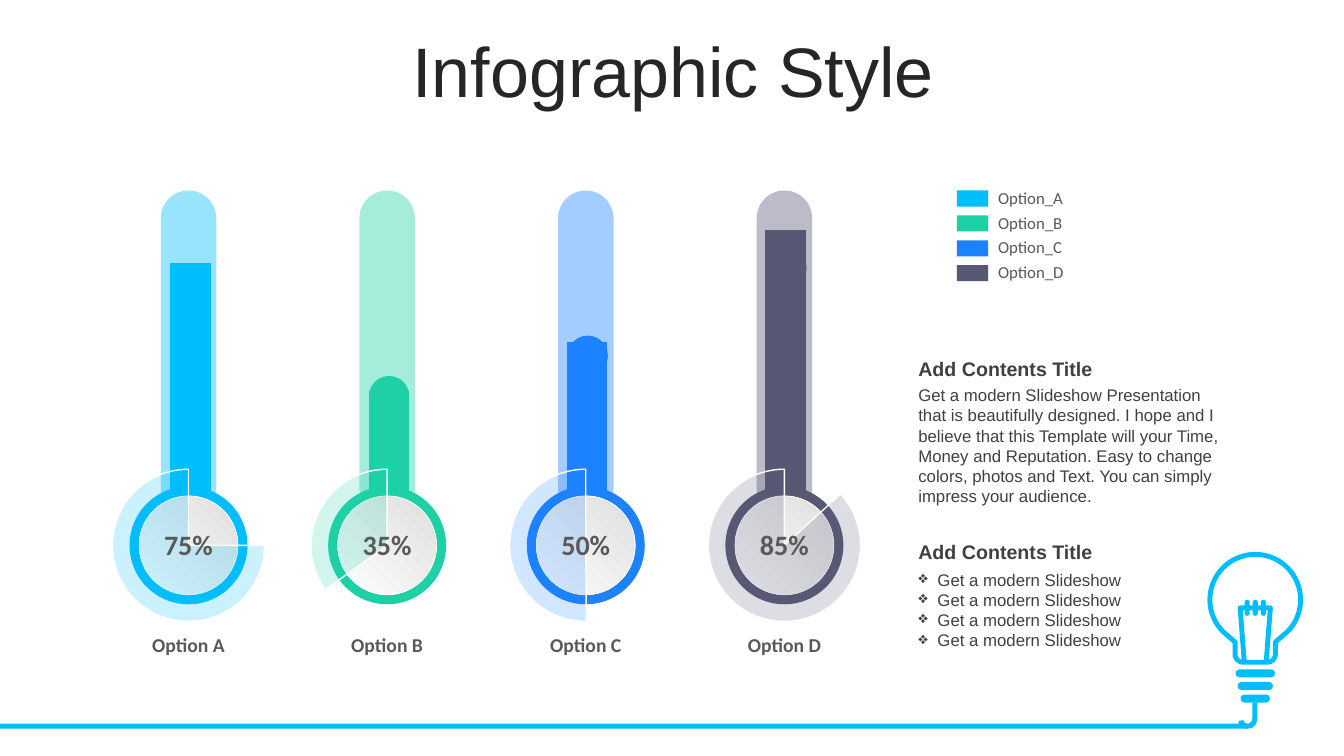
import math

import pptx
import pptx.chart.data
import pptx.dml.color
import pptx.enum.chart
import pptx.enum.shapes
import pptx.enum.text
import pptx.oxml
import pptx.oxml.ns
import pptx.util
from lxml import etree

KIND = pptx.enum.shapes.MSO_SHAPE
CENTER = pptx.enum.text.PP_ALIGN.CENTER
SKY, GREY, INK = "00BDFB", "595959", "404040"

# Letter, colour, percentage, bar height, start angle of the pie, top of the cap
OPTIONS = [
    ("A", SKY, 75, 88, 0, 2.71),
    ("B", "1ED0A6", 35, 41, 144.3, 3.73),
    ("C", "1C82FF", 50, 59, 89.6, 3.33),
    ("D", "565874", 85, 100, 317.6, 2.46),
]

# The slide is a grid of one-inch squares
COLUMNS, ROWS = 13.33, 7.5
FIRST_GAUGE, GAUGE_STEP = 1.87, 1.97
BULB_MIDDLE = 12.45


def grid(*squares):
    return [pptx.util.Inches(count) for count in squares]


def color(code):
    return pptx.dml.color.RGBColor.from_string(code)


def paint(shape, fill=None, line=None, weight=1, opacity=100):
    shape.shadow.inherit = False
    if fill:
        shape.fill.solid()
        shape.fill.fore_color.rgb = color(fill)
        if opacity < 100:
            tone = next(shape._element.iter(pptx.oxml.ns.qn("a:srgbClr")))
            etree.SubElement(tone, pptx.oxml.ns.qn("a:alpha"), val=str(opacity * 1000))
    else:
        shape.fill.background()
    if line:
        shape.line.color.rgb = color(line)
        shape.line.width = pptx.util.Pt(weight)
    else:
        shape.line.fill.background()


def add_preset(slide, kind, box, fill, adjust=(), **look):
    shape = slide.shapes.add_shape(kind, *grid(*box))
    for place, value in enumerate(adjust):
        shape.adjustments[place] = value
    paint(shape, fill, **look)
    return shape


def add_disc(slide, middle, center, size, fill, **look):
    box = (middle - size / 2, center - size / 2, size, size)
    return add_preset(slide, KIND.OVAL, box, fill, **look)


def add_pill(slide, middle, top, width, height, fill, **look):
    box = (middle - width / 2, top, width, height)
    return add_preset(slide, KIND.ROUNDED_RECTANGLE, box, fill, [0.5], **look)


def add_outline(slide, points, closed, **look):
    corners = [grid(*point) for point in points]
    builder = slide.shapes.build_freeform(*corners[0])
    builder.add_line_segments(corners[1:], close=closed)
    paint(builder.convert_to_shape(), **look)


def add_text(slide, box, text, size, tone, font="Arial", bold=False, align=None):
    frame = slide.shapes.add_textbox(*grid(*box)).text_frame
    frame.word_wrap = True
    frame.text = text
    for paragraph in frame.paragraphs:
        paragraph.alignment = align
        for run in paragraph.runs:
            run.font.size = pptx.util.Pt(size)
            run.font.name = font
            run.font.bold = bold
            run.font.color.rgb = color(tone)
    return frame


def add_bullets(frame):
    indent = pptx.util.Inches(0.19)
    for paragraph in frame.paragraphs:
        props = paragraph._p.get_or_add_pPr()
        props.set("marL", str(indent))
        props.set("indent", str(-indent))
        etree.SubElement(props, pptx.oxml.ns.qn("a:buChar"), char="❖")


def arc(middle, center, radius, start, end, steps=48):
    angles = [math.radians(start + (end - start) * step / steps) for step in range(steps + 1)]
    return [(middle + radius * math.cos(a), center + radius * math.sin(a)) for a in angles]


def add_light_bulb(slide):
    # Glass and neck with rounded lower corners
    glass = arc(BULB_MIDDLE, 5.95, 0.45, 135, 405)
    neck = [(BULB_MIDDLE + 0.2, 6.37)]
    neck += arc(BULB_MIDDLE + 0.12, 6.49, 0.08, 0, 90, 8)
    neck += arc(BULB_MIDDLE - 0.12, 6.49, 0.08, 90, 180, 8)
    neck += [(BULB_MIDDLE - 0.2, 6.37)]
    add_outline(slide, glass + neck, True, fill="FFFFFF", line=SKY, weight=3.5)
    # Screw base
    for turn, width in enumerate((0.39, 0.35, 0.29)):
        add_pill(slide, BULB_MIDDLE, 6.64 + 0.125 * turn, width, 0.08, SKY)
    # Filament
    filament = [(x + BULB_MIDDLE, y) for x, y in
                ((-0.11, 6.55), (-0.15, 6.03), (0.15, 6.03), (0.11, 6.55))]
    add_outline(slide, filament, False, line=SKY, weight=3.5)
    for coil in (-1, 0, 1):
        add_pill(slide, BULB_MIDDLE + 0.08 * coil, 5.95, 0.05, 0.16, SKY)
    # Cable
    add_preset(slide, KIND.RECTANGLE, (0, 7.18, 12.37, 0.05), SKY)
    add_preset(slide, KIND.RECTANGLE, (12.42, 6.97, 0.05, 0.17), SKY)
    add_preset(slide, KIND.BLOCK_ARC, (12.28, 7.04, 0.19, 0.19), SKY, [-4.34, 101.53, 0.27])


def add_level_chart(slide):
    levels = pptx.chart.data.CategoryChartData()
    levels.categories = ["1", "2", "3", "4"]
    levels.add_series("Series 1", [option[3] for option in OPTIONS])
    chart = slide.shapes.add_chart(
        pptx.enum.chart.XL_CHART_TYPE.COLUMN_STACKED, *grid(0.74, 2.08, 8.2, 2.96), levels).chart
    chart.has_legend = chart.has_title = False
    chart.font.size = pptx.util.Pt(18)
    chart.font.name = "Arial"
    chart.font.color.rgb = color("000000")
    chart.category_axis.visible = chart.value_axis.visible = False
    chart.value_axis.has_major_gridlines = False
    chart.value_axis.minimum_scale, chart.value_axis.maximum_scale = 0, 100
    plot = chart.plots[0]
    plot.gap_width, plot.overlap, plot.vary_by_categories = 392, 100, False
    for place, option in enumerate(OPTIONS):
        bar = plot.series[0].points[place].format.fill
        bar.solid()
        bar.fore_color.rgb = color(option[1])
    # Fixed plot area, so that the bars stand inside the tubes
    area = chart._chartSpace.chart.plotArea
    for old in area.findall(pptx.oxml.ns.qn("c:layout")):
        area.remove(old)
    shares = "".join(f'<c:{key} val="{share}"/>' for key, share in
                     (("x", 0.02), ("y", 0.07), ("w", 0.96), ("h", 0.91)))
    area.insert(0, pptx.oxml.parse_xml(
        f'<c:layout {pptx.oxml.ns.nsdecls("c")}><c:manualLayout><c:layoutTarget val="inner"/>'
        f'<c:xMode val="edge"/><c:yMode val="edge"/>{shares}</c:manualLayout></c:layout>'))


def add_gauge(slide, middle, letter, tone, percent, start):
    center = 5.41
    add_disc(slide, middle, center, 1.17, tone)
    dial = add_disc(slide, middle, center, 0.98, "FFFFFF", line="FFFFFF", weight=0.5)
    dial.fill.gradient()
    dial.fill.gradient_angle = 225
    for stop, shade in zip(dial.fill.gradient_stops, ("DEDEDE", "FFFFFF")):
        stop.color.rgb = color(shade)
    # Pie angles are stored in sixtieths of a thousandth of a degree
    pie = (middle - 0.755, center - 0.755, 1.51, 1.51)
    add_preset(slide, KIND.PIE, pie, tone, [start * 0.6, 270 * 0.6],
               line="FFFFFF", weight=1, opacity=20)
    add_text(slide, (middle - 0.585, 5.18, 1.17, 0.44), f"{percent}%", 20, GREY,
             "Calibri", True, CENTER)
    add_text(slide, (middle - 0.67, 6.23, 1.34, 0.34), f"Option {letter}", 14, GREY,
             "Calibri", True, CENTER)


def add_legend_entry(slide, row, letter, tone):
    top = 1.89 + 0.247 * row
    add_preset(slide, KIND.RECTANGLE, (9.49, top, 0.31, 0.16), tone)
    add_text(slide, (9.8, top - 0.08, 1.11, 0.3), f"Option_{letter}", 12, GREY, "Calibri")


def main():
    deck = pptx.Presentation()
    deck.slide_width, deck.slide_height = grid(COLUMNS, ROWS)
    slide = deck.slides.add_slide(deck.slide_layouts[6])

    add_light_bulb(slide)
    title = add_text(slide, (0.35, 0.37, 12.66, 0.79), "Infographic Style", 50, "262626",
                     align=CENTER)
    title.vertical_anchor = pptx.enum.text.MSO_ANCHOR.MIDDLE
    title.paragraphs[0].line_spacing = 0.8

    # Thermometers: tubes behind the bars, gauges and caps in front
    middles = [FIRST_GAUGE + GAUGE_STEP * place for place in range(len(OPTIONS))]
    for middle, option in zip(middles, OPTIONS):
        add_pill(slide, middle, 1.89, 0.55, 3.23, option[1], opacity=40)
    add_level_chart(slide)
    for row, (middle, option) in enumerate(zip(middles, OPTIONS)):
        letter, tone, percent, _, start, cap_top = option
        add_gauge(slide, middle, letter, tone, percent, start)
        add_disc(slide, middle + 0.02, cap_top + 0.2, 0.4, tone)
        add_legend_entry(slide, row, letter, tone)

    # Text column
    for top in (3.49, 5.31):
        add_text(slide, (9.01, top, 3.23, 0.34), "Add Contents Title", 14, INK, bold=True)
    add_text(slide, (9.01, 3.77, 3.23, 1.31),
             "Get a modern Slideshow Presentation that is beautifully designed. I hope and I "
             "believe that this Template will your Time, Money and Reputation. Easy to change "
             "colors, photos and Text. You can simply impress your audience.", 12, INK)
    add_bullets(add_text(slide, (9.01, 5.6, 3.23, 0.91),
                         "\n".join(["Get a modern Slideshow"] * 4), 12, INK))
    deck.save("out.pptx")


if __name__ == "__main__":
    main()
